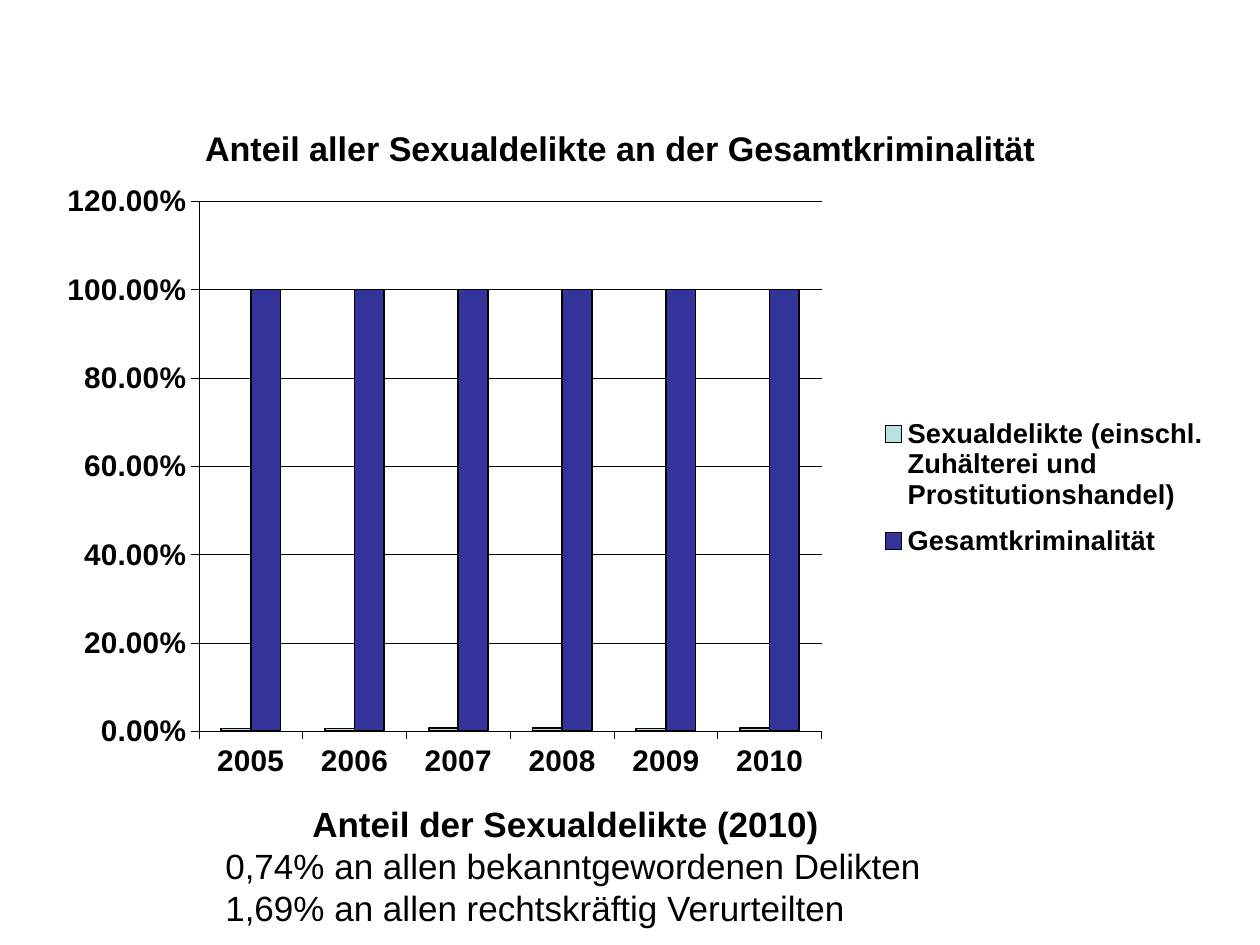
from lxml.etree import SubElement as Sub, QName
from pptx import Presentation
from pptx.chart.data import CategoryChartData as Data
from pptx.dml.color import RGBColor as RGB
from pptx.enum.chart import (XL_CHART_TYPE as Kind, XL_LEGEND_POSITION as Side,
                             XL_TICK_LABEL_POSITION as Label, XL_TICK_MARK as Tick)
from pptx.enum.text import MSO_ANCHOR as Anchor
from pptx.oxml.ns import qn
from pptx.util import Inches, Pt

WIDE, HIGH = Inches(10), Inches(7.5)
BLACK = "000000"
YEARS = ["2005", "2006", "2007", "2008", "2009", "2010"]
SERIES = [
    ("Sexualdelikte (einschl. Zuhälterei und Prostitutionshandel)",
     [0.006, 0.006, 0.007, 0.007, 0.006, 0.0074], "BBE0E3"),
    ("Gesamtkriminalität", [1] * len(YEARS), "333399"),
]
NOTES = [
    ("Anteil der Sexualdelikte (2010)", True, 0.69),
    ("0,74% an allen bekanntgewordenen Delikten", False, 0),
    ("1,69% an allen rechtskräftig Verurteilten", False, 0),
]


def paint(color, code):
    """Set a colour format from a hex string."""
    color.rgb = RGB.from_string(code)


def style(font, size, bold=True):
    """Set black Arial in the given size."""
    font.name, font.size, font.bold = "Arial", Pt(size), bold
    paint(font.color, BLACK)


def stroke(line, width):
    """Draw a black line of the given width."""
    paint(line.color, BLACK)
    line.width = Pt(width)


def share(left, top, wide, high):
    """Turn shares of the slide into lengths."""
    return int(WIDE * left), int(HIGH * top), int(WIDE * wide), int(HIGH * high)


def place(part, index, inner=False, **spots):
    """Give a chart part a manual layout in shares of the chart."""
    for old in part.findall(qn("c:layout")):
        part.remove(old)
    layout = Sub(part, qn("c:layout"))
    part.insert(index, layout)
    manual = Sub(layout, qn("c:manualLayout"))
    if inner:
        Sub(manual, qn("c:layoutTarget"), val="inner")
    for key in ("x", "y"):
        Sub(manual, qn(f"c:{key}Mode"), val="edge")
    for key, value in spots.items():
        Sub(manual, qn(f"c:{key}"), val=str(value))


def dress(axis):
    """Style an axis, its ticks and its labels."""
    stroke(axis.format.line, 0.25)
    axis.major_tick_mark, axis.minor_tick_mark = Tick.OUTSIDE, Tick.NONE
    style(axis.tick_labels.font, 17)


def plot(slide):
    """Add the column chart."""
    data = Data(number_format="0.00%")
    data.categories = YEARS
    for name, values, _ in SERIES:
        data.add_series(name, values)
    box = share(0.035, 0.097, 0.945, 0.748)
    chart = slide.shapes.add_chart(Kind.COLUMN_CLUSTERED, *box, data).chart
    style(chart.font, 17)

    chart.has_title = True
    run = chart.chart_title.text_frame.paragraphs[0].add_run()
    run.text = "Anteil aller Sexualdelikte an der Gesamtkriminalität"
    style(run.font, 19.5)

    chart.has_legend = True
    chart.legend.position = Side.RIGHT
    chart.legend.include_in_layout = False
    style(chart.legend.font, 15.6)

    years, rates = chart.category_axis, chart.value_axis
    dress(years)
    dress(rates)
    years.tick_labels.position = Label.LOW
    rates.minimum_scale, rates.maximum_scale, rates.major_unit = 0, 1.2, 0.2
    rates.tick_labels.number_format = "0.00%"
    rates.tick_labels.number_format_is_linked = False
    stroke(rates.major_gridlines.format.line, 0.25)

    bars = chart.plots[0]
    bars.gap_width, bars.overlap, bars.vary_by_categories = 150, 0, False
    for item, (_, _, code) in zip(bars.series, SERIES):
        item.format.fill.solid()
        paint(item.format.fill.fore_color, code)
        stroke(item.format.line, 1)

    for part in chart._chartSpace.find(qn("c:chart")):
        kind = QName(part).localname
        if kind == "title":
            place(part, 1, x=0.13, y=0.04)
        elif kind == "plotArea":
            place(part, 0, True, x=0.13, y=0.155, w=0.523, h=0.75)
        elif kind == "legend":
            place(part, 1, x=0.69, y=0.44, w=0.3, h=0.24)


def note(slide):
    """Add the lines below the chart."""
    frame = slide.shapes.add_textbox(*share(0.169, 0.868, 0.606, 0.095)).text_frame
    frame.word_wrap, frame.vertical_anchor = True, Anchor.MIDDLE
    for i, (text, bold, indent) in enumerate(NOTES):
        para = frame.add_paragraph() if i else frame.paragraphs[0]
        para.line_spacing = Pt(24)
        para._p.get_or_add_pPr().set("indent", str(Inches(indent)))
        run = para.add_run()
        run.text = text
        style(run.font, 20, bold)


def main():
    """Build the slide and save it."""
    deck = Presentation()
    deck.slide_width, deck.slide_height = WIDE, HIGH
    slide = deck.slides.add_slide(deck.slide_layouts[6])
    plot(slide)
    note(slide)
    deck.save("out.pptx")


if __name__ == "__main__":
    main()
